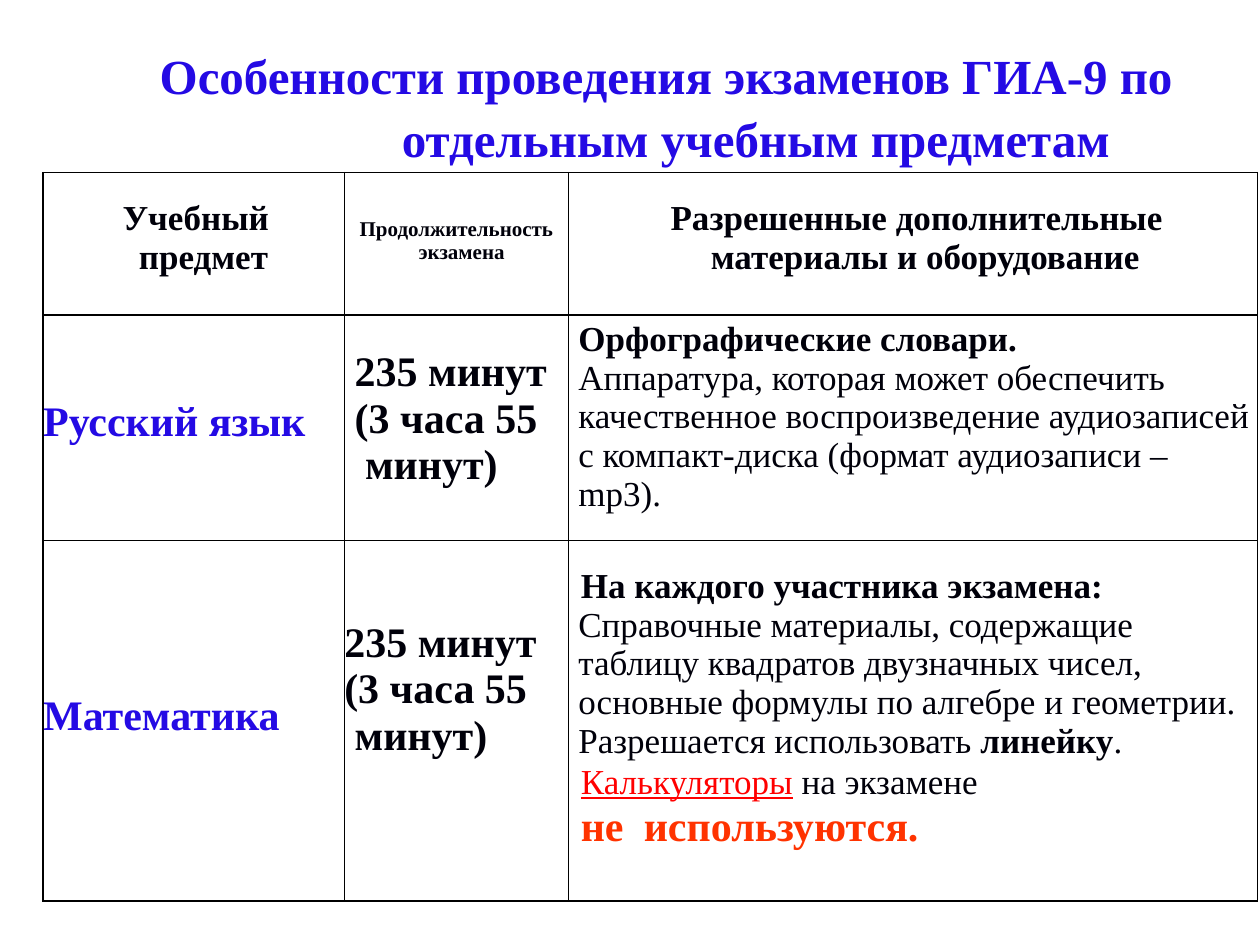
from lxml.etree import SubElement
from pptx import Presentation
from pptx.dml.color import RGBColor
from pptx.enum.text import MSO_ANCHOR, MSO_AUTO_SIZE, PP_ALIGN
from pptx.oxml.ns import qn
from pptx.util import Cm, Pt

FONT = "Times New Roman"
COLORS = {"blue": "240AE4", "ink": "00000A", "red": "FF0000",
          "orange": "FF3300", "line": "000000"}


def fill_paragraph(p, left, first, runs):
    """Indent in cm; a run is (text, size, colour, bold), None is a line break."""
    p.alignment = PP_ALIGN.LEFT
    pPr = p._p.get_or_add_pPr()
    pPr.set("marL", str(Cm(left)))
    pPr.set("indent", str(Cm(first)))
    for run in runs:
        if run is None:
            p.add_line_break()
            continue
        text, size, color, bold = run
        r = p.add_run()
        r.text = text
        r.font.name = FONT
        r.font.size = Pt(size)
        r.font.bold = bold
        r.font.color.rgb = RGBColor.from_string(COLORS[color])


def add_borders(cell):
    tcPr = cell._tc.get_or_add_tcPr()
    for i, side in enumerate(("a:lnL", "a:lnR", "a:lnT", "a:lnB")):
        ln = SubElement(tcPr, qn(side), w=str(Pt(1)))
        fill = SubElement(ln, qn("a:solidFill"))
        SubElement(fill, qn("a:srgbClr"), val=COLORS["line"])
        tcPr.remove(ln)
        tcPr.insert(i, ln)


prs = Presentation()
prs.slide_width, prs.slide_height = Cm(25.4), Cm(19.05)
s = prs.slides.add_slide(prs.slide_layouts[5])

# Title
title = s.shapes.title
title.left, title.top, title.width, title.height = Cm(3.2), Cm(0.79), Cm(20.57), Cm(2.44)
tf = title.text_frame
tf.word_wrap = True
tf.auto_size = MSO_AUTO_SIZE.NONE
tf.vertical_anchor = MSO_ANCHOR.TOP
tf.margin_left = tf.margin_right = tf.margin_bottom = 0
tf.margin_top = Cm(0.03)
fill_paragraph(tf.paragraphs[0], 4.9, -4.88, [
    ("Особенности проведения экзаменов ГИА-9 по отдельным учебным предметам",
     28, "blue", True)])
tf.paragraphs[0].line_spacing = 1.08

# Table content: each cell is (top margin, [(left, first-line indent, runs), ...])
duration = [("235 минут", 24, "ink", True)], [("(3 часа 55 минут)", 24, "ink", True)]
rows = [
    [(0.53, [(1.93, -0.33, [("Учебный предмет", 20, "ink", True)])]),
     (0.91, [(1.5, -1.19, [("Продолжительность экзамена", 12, "ink", True)])]),
     (0.53, [(2.87, -0.81, [("Разрешенные дополнительные материалы и оборудование",
                             20, "ink", True)])])],
    [(1.7, [(0, 0, [("Русский язык", 24, "blue", True)])]),
     (0.69, [(0.42, -0.21, runs) for runs in duration]),
     (0.1, [(0.2, 0, [("Орфографические словари.", 20, "ink", True)]),
            (0.2, 0, [("Аппаратура, которая может обеспечить качественное "
                       "воспроизведение аудиозаписей с компакт-диска "
                       "(формат аудиозаписи –", 20, "ink", False), None,
                      ("mp3).", 20, "ink", False)])])],
    [(3.07, [(0, 0, [("Математика", 24, "blue", True)])]),
     (1.6, [(0.21, -0.21, runs) for runs in duration]),
     (0.53, [(0.2, 0.05, [("На каждого участника экзамена: ", 20, "ink", True),
                          ("Справочные материалы, содержащие", 20, "ink", False), None,
                          ("таблицу квадратов двузначных чисел, основные формулы "
                           "по алгебре и геометрии. Разрешается использовать ",
                           20, "ink", False),
                          ("линейку", 20, "ink", True),
                          (".", 20, "ink", False)]),
             (0.25, 0, [("Калькуляторы", 20, "red", False),
                        (" на экзамене", 20, "ink", False)]),
             (0.25, 0, [("не\tиспользуются.", 24, "orange", True)])])],
]
col_widths = [6.07, 4.52, 13.89]
row_heights = [2.87, 4.55, 7.26]

# Table
table = s.shapes.add_table(len(rows), len(col_widths), Cm(0.87), Cm(3.48),
                           Cm(sum(col_widths)), Cm(sum(row_heights))).table
table.first_row = table.horz_banding = False
for column, width in zip(table.columns, col_widths):
    column.width = Cm(width)
for i, (height, row) in enumerate(zip(row_heights, rows)):
    table.rows[i].height = Cm(height)
    for j, (top, paragraphs) in enumerate(row):
        cell = table.cell(i, j)
        cell.fill.background()
        cell.margin_left = cell.margin_right = cell.margin_bottom = 0
        cell.margin_top = Cm(top)
        cell.vertical_anchor = MSO_ANCHOR.TOP
        add_borders(cell)
        tf = cell.text_frame
        for k, (left, first, runs) in enumerate(paragraphs):
            p = tf.add_paragraph() if k else tf.paragraphs[0]
            fill_paragraph(p, left, first, runs)

# Calculator note: underline, tab stop and fixed line heights
calculators, not_used = table.cell(2, 2).text_frame.paragraphs[1:]
calculators.runs[0].font.underline = True
calculators.line_spacing = Pt(23.2)
tabs = SubElement(not_used._p.get_or_add_pPr(), qn("a:tabLst"))
SubElement(tabs, qn("a:tab"), pos=str(Cm(2.54)), algn="l")
not_used.line_spacing = Pt(28)

prs.save("out.pptx")
